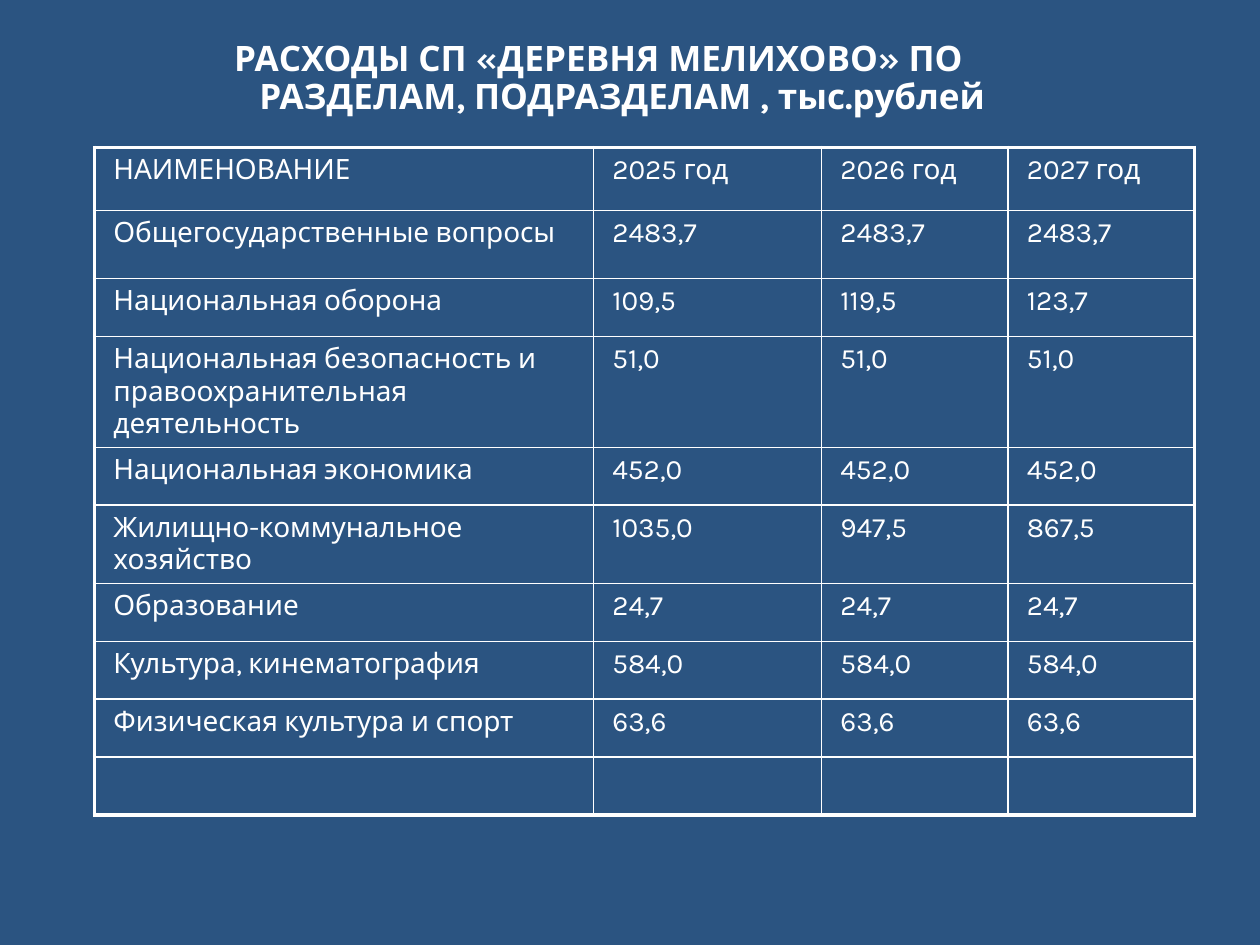
from dataclasses import dataclass

from lxml.etree import SubElement
from pptx import Presentation
from pptx.dml.color import RGBColor
from pptx.enum.text import MSO_ANCHOR, MSO_AUTO_SIZE, PP_ALIGN
from pptx.oxml.ns import qn
from pptx.util import Pt

NAVY = RGBColor(0x2B, 0x54, 0x81)
WHITE = RGBColor(0xFF, 0xFF, 0xFF)
FONT = "Karla"
OUTER, INNER = 2.25, 1  # border widths in points


@dataclass
class Expense:
    name: str
    years: tuple
    height: float = 33.12

    @property
    def texts(self) -> tuple:
        return (self.name, *self.years)


TITLE = "РАСХОДЫ СП «ДЕРЕВНЯ МЕЛИХОВО» ПО РАЗДЕЛАМ, ПОДРАЗДЕЛАМ , тыс.рублей"
COLUMN_WIDTHS = (285.12, 130.32, 106.56, 106.56)
ROWS = (
    Expense("НАИМЕНОВАНИЕ", ("2025 год", "2026 год", "2027 год"), 36),
    Expense("Общегосударственные вопросы", ("2483,7", "2483,7", "2483,7"), 38.88),
    Expense("Национальная оборона", ("109,5", "119,5", "123,7")),
    Expense("Национальная безопасность и правоохранительная деятельность",
            ("51,0", "51,0", "51,0"), 51.84),
    Expense("Национальная экономика", ("452,0", "452,0", "452,0")),
    Expense("Жилищно-коммунальное хозяйство", ("1035,0", "947,5", "867,5"), 29.52),
    Expense("Образование", ("24,7", "24,7", "24,7")),
    Expense("Культура, кинематография", ("584,0", "584,0", "584,0")),
    Expense("Физическая культура и спорт", ("63,6", "63,6", "63,6")),
    Expense("", ("", "", "")),
)


def write(frame, text: str, *, size: float, bold: bool = False, align=PP_ALIGN.LEFT,
          margin: float = 0, indent: float = 0, spacing: float = 1) -> None:
    """Put one formatted paragraph into a text frame."""
    para = frame.paragraphs[0]
    para.alignment = align
    para.line_spacing = spacing
    properties = para._p.get_or_add_pPr()
    properties.set("marL", str(Pt(margin)))
    properties.set("indent", str(Pt(indent)))
    if not text:
        para.font.size = Pt(size)
        return
    span = para.add_run()
    span.text = text
    span.font.name = FONT
    span.font.size = Pt(size)
    span.font.bold = bold
    span.font.color.rgb = WHITE


def add_borders(cell, widths: dict) -> None:
    """Draw the cell's edges; widths maps L, R, T, B to points, in that order."""
    properties = cell._tc.get_or_add_tcPr()
    for position, (side, width) in enumerate(widths.items()):
        line = SubElement(properties, qn(f"a:ln{side}"), w=str(Pt(width)))
        fill = SubElement(line, qn("a:solidFill"))
        SubElement(fill, qn("a:srgbClr"), val=str(WHITE))
        properties.insert(position, line)


def add_title(page) -> None:
    title = page.shapes.title
    title.left, title.top, title.width, title.height = Pt(90), Pt(20.16), Pt(504), Pt(51.12)
    frame = title.text_frame
    frame.word_wrap = True
    frame.auto_size = MSO_AUTO_SIZE.NONE
    frame.vertical_anchor = MSO_ANCHOR.TOP
    write(frame, TITLE, size=20, bold=True, align=PP_ALIGN.CENTER,
          margin=27, indent=-27, spacing=0.9)


def add_expense_table(page) -> None:
    last_row, last_column = len(ROWS) - 1, len(COLUMN_WIDTHS) - 1
    table = page.shapes.add_table(
        len(ROWS), len(COLUMN_WIDTHS), Pt(54), Pt(84.24),
        Pt(sum(COLUMN_WIDTHS)), Pt(sum(row.height for row in ROWS))).table
    table.first_row = table.horz_banding = False
    for column, width in zip(table.columns, COLUMN_WIDTHS):
        column.width = Pt(width)
    for r, expense in enumerate(ROWS):
        table.rows[r].height = Pt(expense.height)
        for c, text in enumerate(expense.texts):
            cell = table.cell(r, c)
            cell.fill.background()
            write(cell.text_frame, text, size=16, margin=3.6)
            add_borders(cell, {
                "L": OUTER if c == 0 else INNER,
                "R": OUTER if c == last_column else INNER,
                "T": OUTER if r == 0 else INNER,
                "B": OUTER if r == last_row else INNER,
            })


def main() -> None:
    deck = Presentation()
    deck.slide_width, deck.slide_height = Pt(720), Pt(540)
    page = deck.slides.add_slide(deck.slide_layouts[5])  # title only
    page.background.fill.solid()
    page.background.fill.fore_color.rgb = NAVY
    add_title(page)
    add_expense_table(page)
    deck.save("out.pptx")


if __name__ == "__main__":
    main()
